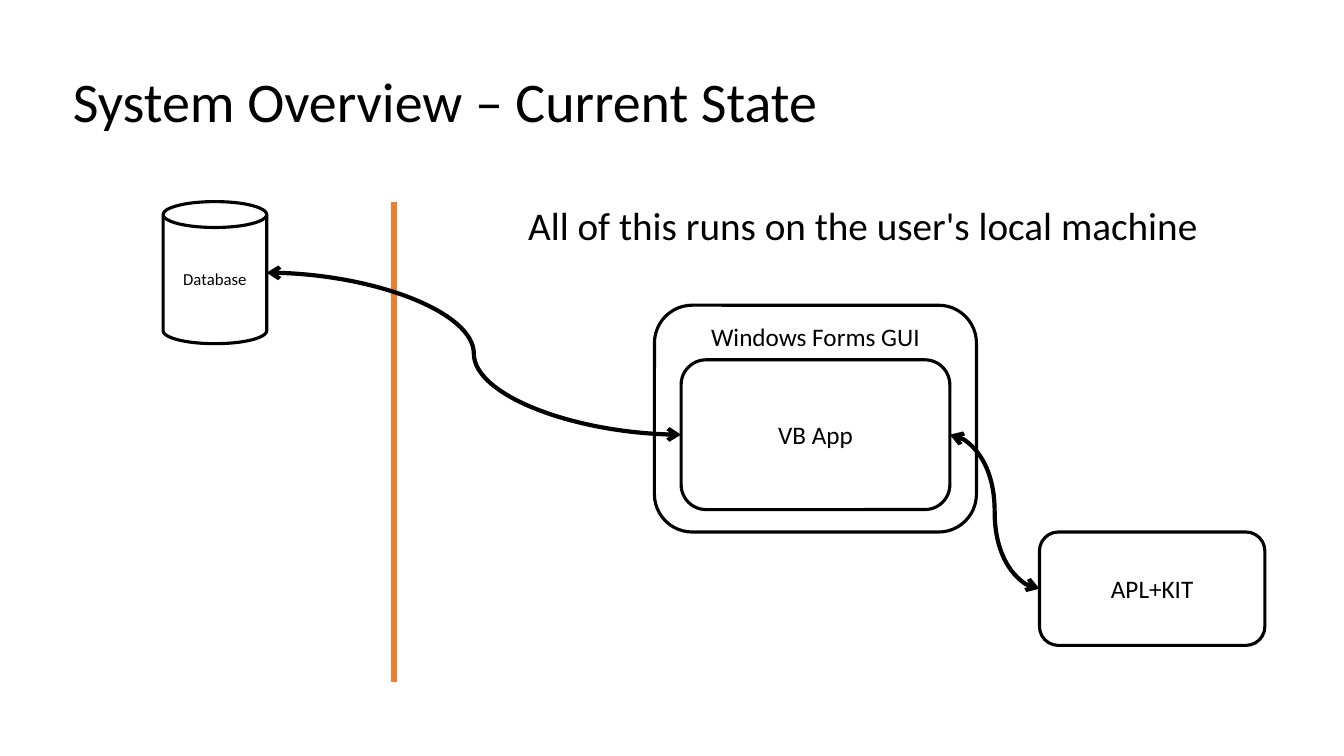
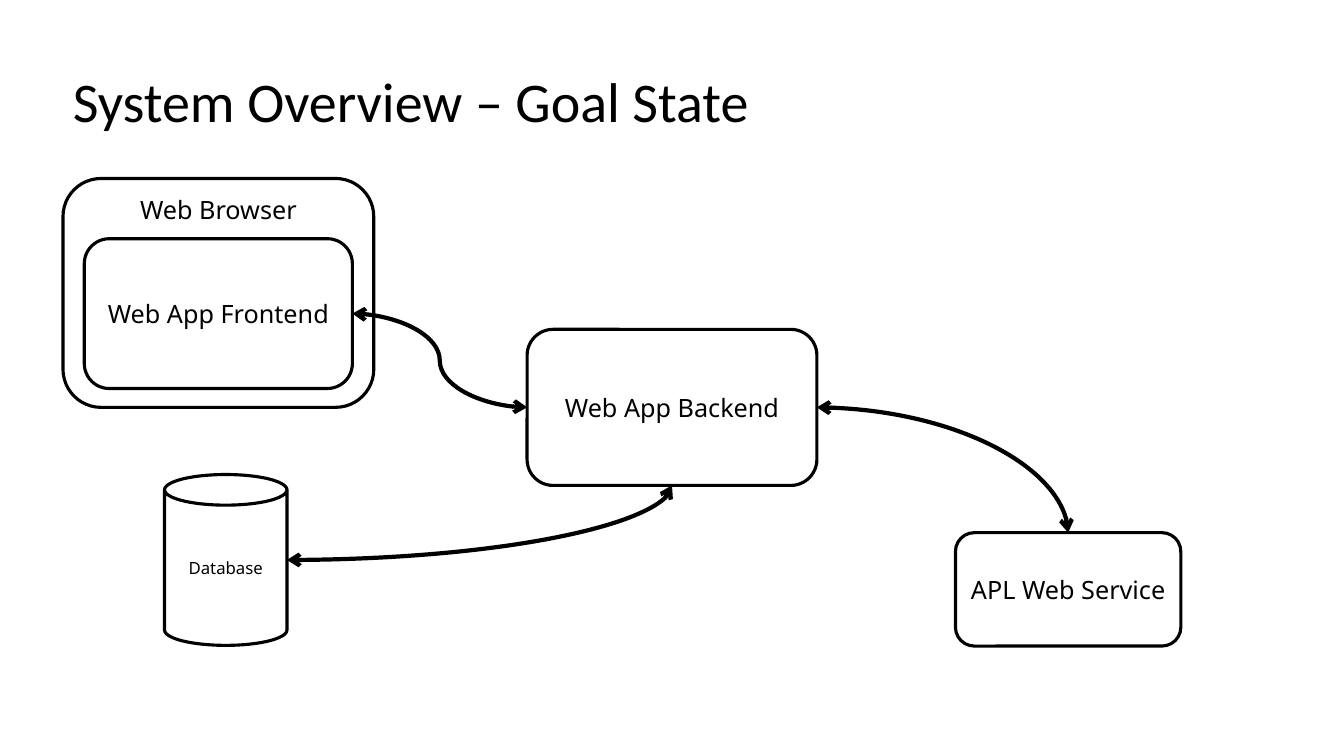
from pptx import Presentation
from pptx.dml.color import RGBColor
from pptx.enum.shapes import MSO_CONNECTOR, MSO_SHAPE
from pptx.enum.text import MSO_ANCHOR, PP_ALIGN
from pptx.oxml.ns import qn
from pptx.util import Pt
from lxml import etree

ROUNDED, CAN = MSO_SHAPE.ROUNDED_RECTANGLE, MSO_SHAPE.CAN
CURVE, STRAIGHT = MSO_CONNECTOR.CURVE, MSO_CONNECTOR.STRAIGHT
TOP, MIDDLE = MSO_ANCHOR.TOP, MSO_ANCHOR.MIDDLE
LEFT, CENTER = PP_ALIGN.LEFT, PP_ALIGN.CENTER
BLACK = RGBColor(0x00, 0x00, 0x00)
WHITE = RGBColor(0xFF, 0xFF, 0xFF)
ORANGE = RGBColor(0xED, 0x7D, 0x31)
TITLE_FONT = "Calibri"
SITE_TOP, SITE_LEFT, SITE_BOTTOM, SITE_RIGHT = range(4)
CAN_SITE_RIGHT = 4


def write(holder, text, font, size, anchor, align, spacing=1.0):
    frame = holder.text_frame
    frame.word_wrap = True
    frame.vertical_anchor = anchor
    frame.text = text
    paragraph = frame.paragraphs[0]
    paragraph.alignment = align
    paragraph.line_spacing = spacing
    letters = paragraph.runs[0].font
    letters.name, letters.size = font, Pt(size)
    letters.color.rgb = BLACK


def style_line(connector, color, width):
    connector.line.color.rgb = color
    connector.line.width = Pt(width)
    etree.SubElement(connector._element.spPr, qn("a:effectLst"))


slides = [
    {
        "title": "System Overview – Current State",
        "font": "Calibri",
        "parts": [
            ("Windows Forms GUI", ROUNDED, 467.5, 218, 230, 162, 18, TOP),
            ("VB App", ROUNDED, 486.5, 257, 192, 107, 18, MIDDLE),
            ("APL+KIT", ROUNDED, 742.5, 380, 161, 81, 18, MIDDLE),
            ("Database", CAN, 116.5, 144, 74, 101.5, 12, MIDDLE),
        ],
        "flows": [
            ("VB App", "APL+KIT", SITE_LEFT),
            ("Database", "VB App", SITE_LEFT),
        ],
        "note": "All of this runs on the user's local machine",
    },
    {
        "title": "System Overview – Goal State",
        "font": "Noto Sans",
        "parts": [
            ("Web Browser", ROUNDED, 45, 127.5, 222, 163.5, 18, TOP),
            ("Web App Backend", ROUNDED, 376.5, 235.25, 207, 111.5, 18, MIDDLE),
            ("Database", CAN, 117.5, 339, 87.5, 122, 12, MIDDLE),
            ("APL Web Service", ROUNDED, 682.5, 380.5, 161, 81, 18, MIDDLE),
            ("Web App Frontend", ROUNDED, 60.25, 170.5, 191.5, 107, 18, MIDDLE),
        ],
        "flows": [
            ("Database", "Web App Backend", SITE_BOTTOM),
            ("Web App Backend", "APL Web Service", SITE_TOP),
            ("Web App Frontend", "Web App Backend", SITE_LEFT),
        ],
        "note": None,
    },
]

deck = Presentation()
deck.slide_width, deck.slide_height = Pt(960), Pt(540)

for content in slides:
    slide = deck.slides.add_slide(deck.slide_layouts[6])
    title = slide.shapes.add_textbox(Pt(45), Pt(34), Pt(870), Pt(81))
    write(title, content["title"], TITLE_FONT, 40, MIDDLE, LEFT, 0.9)

    if content["note"]:
        note = slide.shapes.add_textbox(Pt(317.5), Pt(144), Pt(597.5), Pt(40))
        write(note, content["note"], content["font"], 28, TOP, CENTER, 0.9)
        boundary = slide.shapes.add_connector(
            STRAIGHT, Pt(281.5), Pt(144), Pt(281.5), Pt(487))
        style_line(boundary, ORANGE, 4.5)

    parts = {}
    for label, outline, x, y, width, height, size, anchor in content["parts"]:
        part = slide.shapes.add_shape(outline, Pt(x), Pt(y), Pt(width), Pt(height))
        part.shadow.inherit = False
        part.fill.solid()
        part.fill.fore_color.rgb = WHITE
        part.line.color.rgb = BLACK
        part.line.width = Pt(2.25)
        write(part, label, content["font"], size, anchor, CENTER)
        parts[label] = part

    for source, target, site in content["flows"]:
        flow = slide.shapes.add_connector(CURVE, 0, 0, 0, 0)
        flow.begin_connect(parts[source], SITE_RIGHT)
        flow.end_connect(parts[target], site)
        if parts[source].auto_shape_type == CAN:
            flow._element.nvCxnSpPr.cNvCxnSpPr.stCxn.idx = CAN_SITE_RIGHT
        if site != SITE_LEFT:
            flow._element.spPr.find(qn("a:prstGeom")).set("prst", "curvedConnector2")
        style_line(flow, BLACK, 3)
        stroke = flow.line._get_or_add_ln()
        for end in ("a:headEnd", "a:tailEnd"):
            etree.SubElement(stroke, qn(end), type="arrow")

deck.save("out.pptx")
